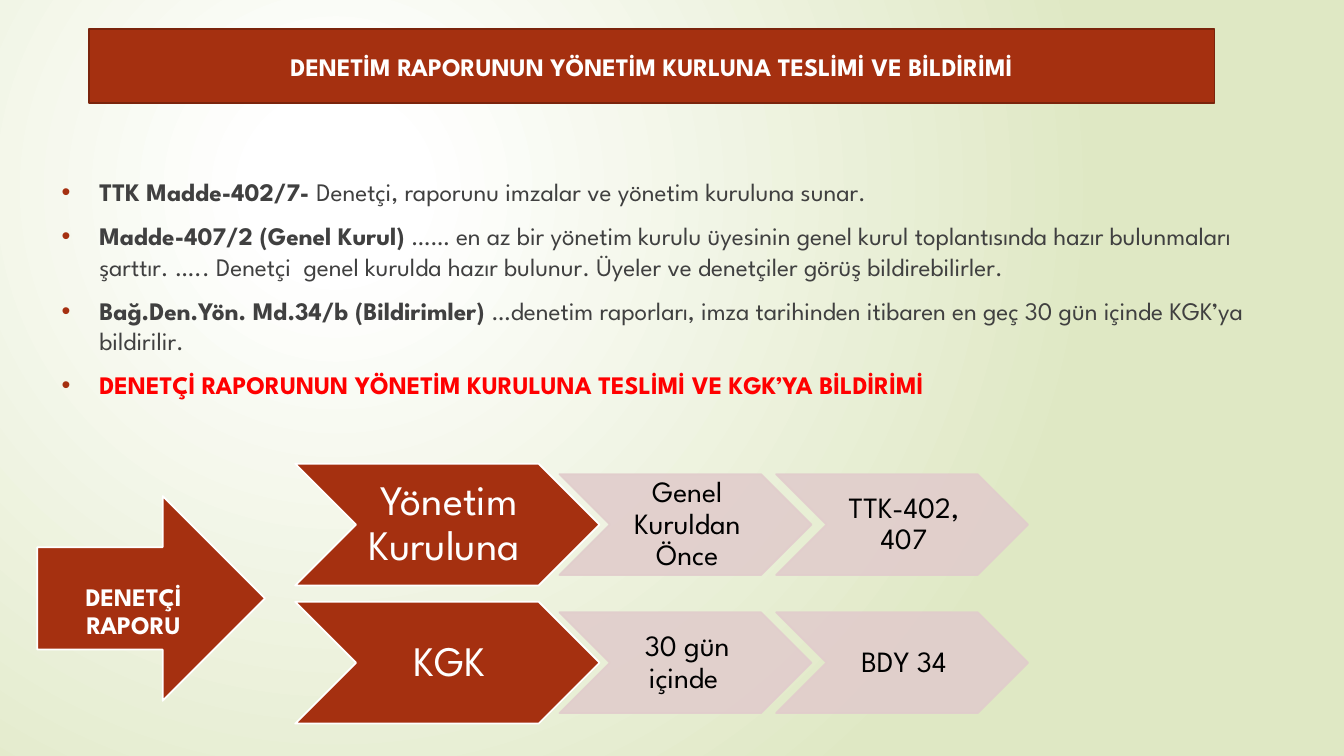
from lxml.etree import SubElement
from pptx import Presentation
from pptx.dml.color import RGBColor
from pptx.enum.shapes import MSO_SHAPE
from pptx.enum.text import MSO_ANCHOR, MSO_AUTO_SIZE, PP_ALIGN
from pptx.oxml.ns import qn
from pptx.util import Cm, Pt

FONT = "League Spartan"
RUST, DARK_RUST, PINK = "A53010", "7A240C", "E1CDCC"
WHITE, BLACK, GREY, RED = "FFFFFF", "000000", "404040", "FF0000"

TITLE = "DENETİM RAPORUNUN YÖNETİM KURLUNA TESLİMİ VE BİLDİRİMİ"
# Each bullet is a list of (text, bold, colour) runs
BULLETS = [
    [("TTK Madde-402/7- ", True, GREY),
     ("Denetçi, raporunu imzalar ve yönetim kuruluna sunar.", False, GREY)],
    [("Madde-407/2 (Genel Kurul) ", True, GREY),
     ("…… en az bir yönetim kurulu üyesinin genel kurul toplantısında hazır "
      "bulunmaları şarttır. ….. Denetçi  genel kurulda hazır bulunur. Üyeler ve "
      "denetçiler görüş bildirebilirler.", False, GREY)],
    [("Bağ.Den.Yön. Md.34/b (Bildirimler) ", True, GREY),
     ("…denetim raporları, imza tarihinden itibaren en geç 30 gün içinde KGK’ya "
      "bildirilir.", False, GREY)],
    [("DENETÇİ RAPORUNUN YÖNETİM KURULUNA TESLİMİ VE KGK’YA BİLDİRİMİ", True, RED)],
]
SOURCE = "DENETÇİ RAPORU"
ROWS = [
    ("Yönetim Kuruluna ", "Genel Kuruldan Önce", "TTK-402, 407"),
    ("KGK", "30 gün içinde ", "BDY 34"),
]

# Lengths in cm
ROW_MIDDLE, ROW_PITCH = 13.22, 3.48
HEAD_LEFT, HEAD_W, HEAD_H = 7.44, 7.67, 3.07
STEP_LEFT, STEP_W, STEP_H, STEP_PITCH = 14.1, 6.35, 2.54, 5.46


def rgb(value):
    return RGBColor.from_string(value)


def place(sp, left, top, width, height):
    sp.left, sp.top, sp.width, sp.height = Cm(left), Cm(top), Cm(width), Cm(height)


def add_run(p, text, size, color, bold=False):
    r = p.add_run()
    r.text = text
    r.font.name, r.font.size, r.font.bold = FONT, Pt(size), bold
    r.font.color.rgb = rgb(color)


def paint(sp, fill, line, alpha=None):
    """Fill and outline a shape; alpha is the opacity in percent."""
    sp.fill.solid()
    sp.fill.fore_color.rgb = rgb(fill)
    sp.line.color.rgb = rgb(line)
    sp.line.width = Pt(1.25)
    if alpha:
        for color in sp._element.spPr.iter(qn("a:srgbClr")):
            SubElement(color, qn("a:alpha"), val=str(alpha * 1000))


def add_shape(kind, box, fill, line, alpha=None):
    left, top, width, height = map(Cm, box)
    sp = s.shapes.add_shape(kind, left, top, width, height)
    sp.shadow.inherit = False
    paint(sp, fill, line, alpha)


def add_label(box, text, size, color, bold=False, inset_x=0.0, inset_y=0.0):
    left, top, width, height = map(Cm, box)
    tf = s.shapes.add_textbox(left, top, width, height).text_frame
    tf.word_wrap = True
    tf.vertical_anchor = MSO_ANCHOR.MIDDLE
    tf.margin_left, tf.margin_right = Cm(inset_x), 0
    tf.margin_top = tf.margin_bottom = Cm(inset_y)
    p = tf.paragraphs[0]
    p.alignment = PP_ALIGN.CENTER
    p.line_spacing = 0.9
    add_run(p, text, size, color, bold)


def add_chevron(left, middle, width, height, text, size, color, fill, line, alpha=None):
    """Chevron with its label between the notch and the point."""
    top = middle - height / 2
    add_shape(MSO_SHAPE.CHEVRON, (left, top, width, height), fill, line, alpha)
    add_label((left + height / 2, top, width - height, height), text, size, color,
              inset_x=0.09, inset_y=0.04)


def add_bullet(p):
    pPr = p._p.get_or_add_pPr()
    pPr.set("marL", str(Cm(0.95)))
    pPr.set("indent", str(-Cm(0.95)))
    SubElement(SubElement(pPr, qn("a:buClr")), qn("a:srgbClr"), val=RUST)
    SubElement(pPr, qn("a:buFont"), typeface="Arial")
    SubElement(pPr, qn("a:buChar"), char="•")


prs = Presentation()
prs.slide_width, prs.slide_height = Cm(33.87), Cm(19.05)
s = prs.slides.add_slide(prs.slide_layouts[1])

# Background: circular gradient
fill = s.background.fill
fill.gradient()
for stop, position, color in zip(fill.gradient_stops, (0.1, 1), (WHITE, "DFE8C4")):
    stop.position = position
    stop.color.rgb = rgb(color)
grad = next(s._element.iter(qn("a:gradFill")))
grad.remove(grad.find(qn("a:lin")))
circle = SubElement(grad, qn("a:path"), path="circle")
SubElement(circle, qn("a:fillToRect"), l="50000", t="50000", r="100000", b="100000")

# Title
title = s.shapes.title
place(title, 2.24, 0.74, 28.37, 1.85)
paint(title, RUST, DARK_RUST)
tf = title.text_frame
tf.auto_size = MSO_AUTO_SIZE.NONE
tf.vertical_anchor = MSO_ANCHOR.MIDDLE
p = tf.paragraphs[0]
p.alignment = PP_ALIGN.CENTER
add_run(p, TITLE, 18, WHITE, True)

# Legal references
body = s.placeholders[1]
place(body, 1.3, 4.32, 30.66, 12.34)
tf = body.text_frame
tf.auto_size = MSO_AUTO_SIZE.NONE
for i, runs in enumerate(BULLETS):
    p = tf.add_paragraph() if i else tf.paragraphs[0]
    p.space_before = Pt(10)
    add_bullet(p)
    for text, bold, color in runs:
        add_run(p, text, 18, color, bold)

# Recipient, deadline and legal basis, one row each
for i, (recipient, *steps) in enumerate(ROWS):
    middle = ROW_MIDDLE + i * ROW_PITCH
    add_chevron(HEAD_LEFT, middle, HEAD_W, HEAD_H, recipient, 30, WHITE, RUST, WHITE)
    for j, step in enumerate(steps):
        add_chevron(STEP_LEFT + j * STEP_PITCH, middle, STEP_W, STEP_H, step, 21,
                    BLACK, PINK, PINK, 90)

# Auditor's report
add_shape(MSO_SHAPE.RIGHT_ARROW, (0.94, 12.5, 5.74, 5.16), RUST, WHITE)
add_label((1.02, 14.25, 4.7, 2.36), SOURCE, 18, WHITE, True, inset_y=0.51)

prs.save("out.pptx")
